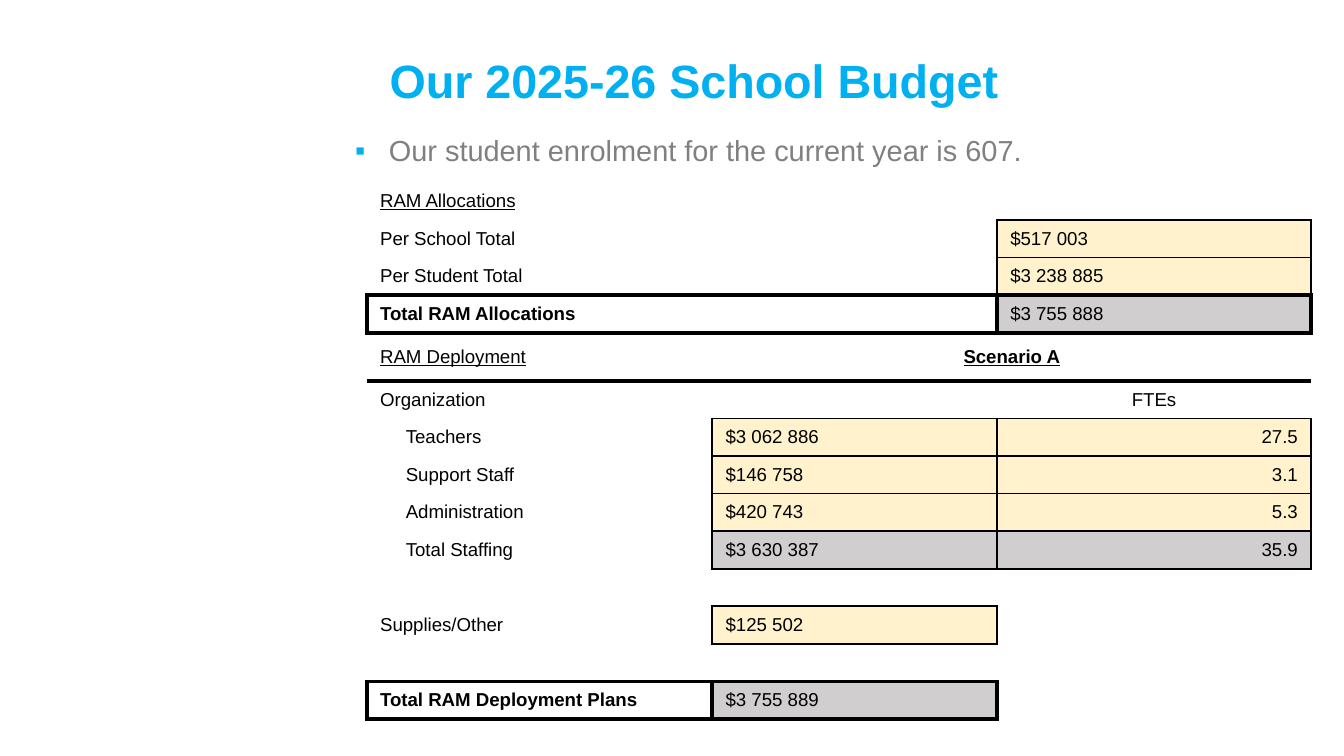
from collections import defaultdict
from dataclasses import dataclass
from typing import Optional

from lxml import etree
from pptx import Presentation
from pptx import util as u
from pptx.dml.color import RGBColor
from pptx.enum import text
from pptx.oxml import ns


@dataclass(frozen=True)
class Theme:
    font: str = "Arial"
    accent: str = "00B0F0"
    muted: str = "808080"
    ink: str = "000000"
    entry: str = "FFF2CC"
    total: str = "D0CECE"
    title_size: float = 25
    body_size: float = 15.5
    table_size: float = 10
    thin: float = 1
    thick: float = 2.25


@dataclass(frozen=True)
class Entry:
    row: int
    col: int
    words: str
    align: Optional[text.PP_ALIGN] = None
    bold: bool = False
    underline: bool = False
    fill: Optional[str] = None
    indented: bool = False


THEME = Theme()
RIGHT, CENTER = text.PP_ALIGN.RIGHT, text.PP_ALIGN.CENTER
COLUMNS = (6.53, 5.38, 5.94)
ROWS = [0.71] * 14
ROWS[4] = 0.91

ENTRIES = [
    Entry(0, 0, "RAM Allocations", underline=True),
    Entry(1, 0, "Per School Total"),
    Entry(1, 2, "$517 003", fill=THEME.entry),
    Entry(2, 0, "Per Student Total"),
    Entry(2, 2, "$3 238 885", fill=THEME.entry),
    Entry(3, 0, "Total RAM Allocations", bold=True),
    Entry(3, 2, "$3 755 888", fill=THEME.total),
    Entry(4, 0, "RAM Deployment", underline=True),
    Entry(4, 1, "Scenario A", CENTER, bold=True, underline=True),
    Entry(5, 0, "Organization"),
    Entry(5, 2, "FTEs", CENTER),
    Entry(11, 0, "Supplies/Other"),
    Entry(11, 1, "$125 502", fill=THEME.entry),
    Entry(13, 0, "Total RAM Deployment Plans", bold=True),
    Entry(13, 1, "$3 755 889", fill=THEME.total),
]
STAFFING = [
    ("Teachers", "$3 062 886", "27.5", THEME.entry),
    ("Support Staff", "$146 758", "3.1", THEME.entry),
    ("Administration", "$420 743", "5.3", THEME.entry),
    ("Total Staffing", "$3 630 387", "35.9", THEME.total),
]
for row, (role, cost, ftes, fill) in enumerate(STAFFING, start=6):
    ENTRIES += [
        Entry(row, 0, role, indented=True),
        Entry(row, 1, cost, fill=fill),
        Entry(row, 2, ftes, RIGHT, fill=fill),
    ]


def style(paragraph, size: float, color: str, bold: bool = False,
          underline: bool = False) -> None:
    font = paragraph.font
    font.name, font.size = THEME.font, u.Pt(size)
    font.bold, font.underline = bold, underline
    font.color.rgb = RGBColor.from_string(color)


def place(shape, left: float, top: float, width: float, height: float) -> None:
    shape.left, shape.top = u.Cm(left), u.Cm(top)
    shape.width, shape.height = u.Cm(width), u.Cm(height)


def add_bullet(paragraph, char: str, color: str, indent: float) -> None:
    props = paragraph._p.get_or_add_pPr()
    props.set("marL", str(u.Cm(indent)))
    props.set("indent", str(-u.Cm(indent)))
    bullet_color = etree.SubElement(props, ns.qn("a:buClr"))
    etree.SubElement(bullet_color, ns.qn("a:srgbClr"), val=color)
    etree.SubElement(props, ns.qn("a:buChar"), char=char)


def outline(edges: dict, row: int, first: int, last: int, width: float) -> None:
    """Frame the cells first..last of a row, on both sides of every edge."""
    for col in range(first, last + 1):
        edges[row, col].update(T=width, B=width)
        edges[row - 1, col]["B"] = width
        edges[row + 1, col]["T"] = width
    edges[row, first]["L"] = edges[row, first - 1]["R"] = width
    edges[row, last]["R"] = edges[row, last + 1]["L"] = width


def draw_edges(cell, sides: dict) -> None:
    props = cell._tc.get_or_add_tcPr()
    for side in "LRTB":
        width = sides.get(side)
        line = etree.SubElement(props, ns.qn(f"a:ln{side}"), w=str(u.Pt(width or 0)))
        if width:
            paint = etree.SubElement(line, ns.qn("a:solidFill"))
            etree.SubElement(paint, ns.qn("a:srgbClr"), val=THEME.ink)
        else:
            etree.SubElement(line, ns.qn("a:noFill"))


def fill_cell(cell, entry: Optional[Entry]) -> None:
    cell.vertical_anchor = text.MSO_ANCHOR.MIDDLE
    paragraph = cell.text_frame.paragraphs[0]
    if entry is None:
        cell.fill.background()
        # Keeps an empty row at its set height
        etree.SubElement(paragraph._p, ns.qn("a:endParaRPr"),
                         sz=str(int(THEME.table_size * 100)))
        return
    paragraph.text = entry.words
    paragraph.alignment = entry.align
    style(paragraph, THEME.table_size, THEME.ink, entry.bold, entry.underline)
    if entry.indented:
        cell.margin_left = u.Cm(0.74)
    if entry.fill:
        cell.fill.solid()
        cell.fill.fore_color.rgb = RGBColor.from_string(entry.fill)
    else:
        cell.fill.background()


def add_budget(slide) -> None:
    frame = slide.shapes.add_table(len(ROWS), len(COLUMNS), u.Cm(6.93), u.Cm(3.45),
                                   u.Cm(sum(COLUMNS)), u.Cm(sum(ROWS)))
    budget = frame.table
    budget.first_row = budget.horz_banding = False
    # Plain table style without grid
    style_id = budget._tbl.tblPr.find(ns.qn("a:tableStyleId"))
    style_id.text = "{2D5ABB26-0587-4C30-8999-92F81FD0307C}"
    for column, width in zip(budget.columns, COLUMNS):
        column.width = u.Cm(width)
    for line, height in zip(budget.rows, ROWS):
        line.height = u.Cm(height)
    budget.cell(0, 0).merge(budget.cell(0, 2))
    budget.cell(4, 1).merge(budget.cell(4, 2))

    # Thin frames first, so that the thick totals win
    edges = defaultdict(dict)
    thin_cells = [(1, 2), (2, 2), (11, 1)]
    thin_cells += [(row, col) for row in range(6, 10) for col in (1, 2)]
    for row, col in thin_cells:
        outline(edges, row, col, col, THEME.thin)
    for row, first, last in [(3, 0, 1), (3, 2, 2), (13, 0, 0), (13, 1, 1)]:
        outline(edges, row, first, last, THEME.thick)
    for col in range(len(COLUMNS)):
        edges[4, col]["B"] = edges[5, col]["T"] = THEME.thick

    entries = {(entry.row, entry.col): entry for entry in ENTRIES}
    for row in range(len(ROWS)):
        for col in range(len(COLUMNS)):
            cell = budget.cell(row, col)
            draw_edges(cell, edges[row, col])
            fill_cell(cell, entries.get((row, col)))


def main() -> None:
    deck = Presentation()
    deck.slide_width, deck.slide_height = u.Cm(25.4), u.Cm(14.29)
    slide = deck.slides.add_slide(deck.slide_layouts[1])

    # Title
    title = slide.shapes.title
    place(title, 7.11, 0.97, 18.29, 1.98)
    title.text_frame.text = "Our 2025-26 School Budget"
    title.text_frame.vertical_anchor = text.MSO_ANCHOR.TOP
    heading = title.text_frame.paragraphs[0]
    heading.alignment, heading.line_spacing = text.PP_ALIGN.LEFT, 0.9
    style(heading, THEME.title_size, THEME.accent, bold=True)

    # Enrolment note
    body = slide.placeholders[1]
    place(body, 6.53, 2.49, 18.24, 9.65)
    note = body.text_frame
    note.margin_left = note.margin_right = u.Cm(0.18)
    note.margin_top = note.margin_bottom = u.Cm(0.1)
    note.text = "Our student enrolment for the current year is 607."
    enrolment = note.paragraphs[0]
    add_bullet(enrolment, "▪", THEME.accent, 0.64)
    enrolment.line_spacing, enrolment.space_before = 0.9, u.Pt(0)
    style(enrolment, THEME.body_size, THEME.muted)

    add_budget(slide)
    deck.save("out.pptx")


if __name__ == "__main__":
    main()
